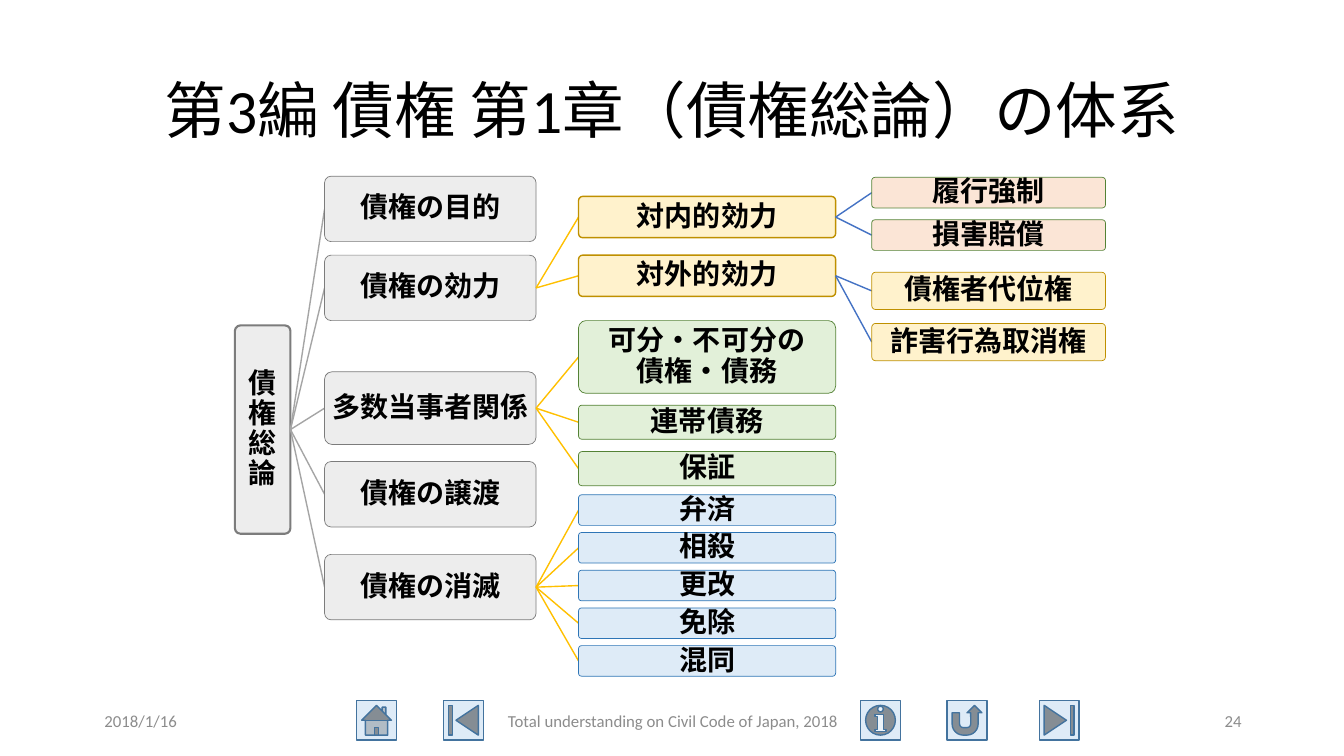
from lxml import etree
from pptx import Presentation
from pptx import util as u
from pptx.dml import color
from pptx.enum import shapes, text
from pptx.oxml import ns

Cm, Pt = u.Cm, u.Pt
KIND = shapes.MSO_SHAPE
ALIGN = text.PP_ALIGN
FONT = "Calibri"

HUES = {
    "black": "000000", "note": "8C8C8C",
    "gray": "EDEDED", "slate": "7C7C7C",
    "gold": "FFF2CC", "ochre": "BF9000",
    "rose": "FBE5D6", "green": "E2F0D9", "moss": "548235",
    "blue": "DEEBF7", "navy": "2E75B6", "steel": "43739E",
    "link1": "A5A5A5", "link2": "FFC000", "link3": "4472C4",
}

# Fill, outline and outline width of each kind of node
STYLES = {
    "root": ("gray", "slate", 1.5),
    "topic": ("gray", "slate", 0.5),
    "effect": ("gold", "ochre", 1),
    "right": ("gold", "ochre", 0.5),
    "remedy": ("rose", "moss", 0.5),
    "party": ("green", "moss", 0.5),
    "end": ("blue", "navy", 0.5),
}

# Left, width and incoming link colour of each level
LEVELS = [
    (5.92, 1.4, None),
    (8.18, 5.33, "link1"),
    (14.58, 6.48, "link2"),
    (21.97, 5.89, "link3"),
]

ENDS = ["弁済", "相殺", "更改", "免除", "混同"]

# Label, style, top, height, children
TREE = ("債\n権\n総\n論", "root", 8.2, 5.25, [
    ("債権の目的", "topic", 4.44, 1.65, []),
    ("債権の効力", "topic", 6.43, 1.65, [
        ("対内的効力", "effect", 4.95, 1.04, [
            ("履行強制", "remedy", 4.47, 0.77, []),
            ("損害賠償", "remedy", 5.54, 0.77, []),
        ]),
        ("対外的効力", "effect", 6.43, 1.04, [
            ("債権者代位権", "right", 6.86, 0.94, []),
            ("詐害行為取消権", "right", 8.15, 0.94, []),
        ]),
    ]),
    ("多数当事者関係", "topic", 9.37, 1.83, [
        ("可分・不可分の\n債権・債務", "party", 8.08, 1.83, []),
        ("連帯債務", "party", 10.21, 0.86, []),
        ("保証", "party", 11.38, 0.86, []),
    ]),
    ("債権の譲渡", "topic", 11.63, 1.65, []),
    ("債権の消滅", "topic", 13.97, 1.65, [
        (name, "end", 12.47 + 0.95 * i, 0.77, [])
        for i, name in enumerate(ENDS)
    ]),
])

BUTTONS = [
    (0, KIND.ACTION_BUTTON_HOME),
    (2.19, KIND.ACTION_BUTTON_BEGINNING),
    (12.7, KIND.ACTION_BUTTON_INFORMATION),
    (14.88, KIND.ACTION_BUTTON_RETURN),
    (17.2, KIND.ACTION_BUTTON_END),
]


def rgb(name):
    return color.RGBColor.from_string(HUES[name])


def write(frame, words, size, hue="black", align=ALIGN.CENTER, bold=False, space=None):
    frame.word_wrap = True
    frame.vertical_anchor = text.MSO_ANCHOR.MIDDLE
    para = frame.paragraphs[0]
    para.alignment = align
    para.line_spacing = space
    for i, line in enumerate(words.split("\n")):
        if i:
            para.add_line_break()
        run = para.add_run()
        run.text = line
        run.font.name = FONT
        run.font.size = Pt(size)
        run.font.bold = bold
        run.font.color.rgb = rgb(hue)


def label(slide, box, words, size, **look):
    """Place a plain text box in box (left, top, width, height in cm)."""
    area = slide.shapes.add_textbox(*map(Cm, box))
    write(area.text_frame, words, size, **look)


def panel(slide, kind, box, fill, edge, width):
    """Place a filled, outlined preset shape."""
    shape = slide.shapes.add_shape(kind, *map(Cm, box))
    shape.shadow.inherit = False
    shape.fill.solid()
    shape.fill.fore_color.rgb = rgb(fill)
    shape.line.color.rgb = rgb(edge)
    shape.line.width = Pt(width)
    return shape


def link(slide, start, stop, hue):
    line = slide.shapes.add_connector(
        shapes.MSO_CONNECTOR.STRAIGHT, *map(Cm, start + stop))
    line.line.color.rgb = rgb(hue)
    line.line.width = Pt(1)
    etree.SubElement(line._element.spPr, ns.qn("a:effectLst"))


def branch(slide, node, level=0, start=None):
    """Draw a node, the link that leads to it, and all its children."""
    words, style, top, high, kids = node
    left, wide, hue = LEVELS[level]
    mid = top + high / 2
    if start:
        link(slide, start, (left, mid), hue)
    shape = panel(slide, KIND.ROUNDED_RECTANGLE, (left, top, wide, high), *STYLES[style])
    shape.adjustments[0] = 0.1
    frame = shape.text_frame
    frame.margin_left = frame.margin_right = Cm(0.05)
    frame.margin_top = frame.margin_bottom = Cm(0.05)
    write(frame, words, 20, bold=True, space=0.9)
    for kid in kids:
        branch(slide, kid, level + 1, (left + wide, mid))


def buttons(slide, left, top, side):
    for shift, kind in BUTTONS:
        panel(slide, kind, (left + shift, top, side, side), "blue", "steel", 1)


def footer(slide, left, top, wide, high):
    side, main = 7.62, 11.43
    parts = [
        (0, side, "2018/1/16", ALIGN.LEFT),
        ((wide - main) / 2, main,
         "Total understanding on Civil Code of Japan, 2018", ALIGN.CENTER),
        (wide - side, side, "24", ALIGN.RIGHT),
    ]
    for shift, span, words, align in parts:
        label(slide, (left + shift, top, span, high), words, 12, hue="note", align=align)


def main():
    deck = Presentation()
    deck.slide_width, deck.slide_height = Cm(33.87), Cm(19.05)
    slide = deck.slides.add_slide(deck.slide_layouts[6])
    buttons(slide, 8.99, 17.65, 1)
    label(slide, (2.33, 1.01, 29.21, 3.68),
          "第3編 債権 第1章（債権総論）の体系", 44, space=0.9)
    branch(slide, TREE)
    footer(slide, 2.38, 17.67, 29.16, 1.01)
    deck.save("out.pptx")


if __name__ == "__main__":
    main()
